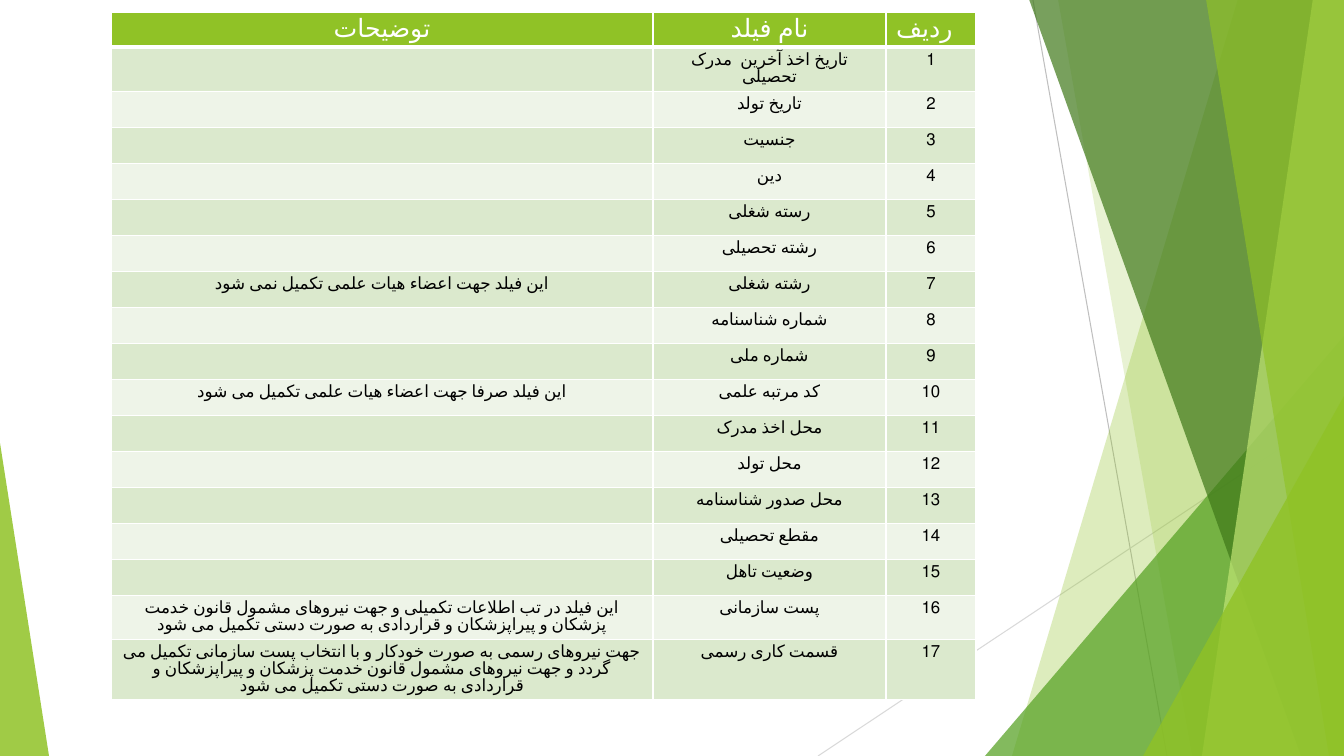
from lxml import etree
from pptx import Presentation
from pptx.dml.color import RGBColor
from pptx.enum.shapes import MSO_CONNECTOR, MSO_SHAPE
from pptx.enum.text import PP_ALIGN
from pptx.oxml.ns import qn
from pptx.util import Pt

STRAIGHT = MSO_CONNECTOR.STRAIGHT
TRIANGLE = MSO_SHAPE.ISOSCELES_TRIANGLE
CENTER = PP_ALIGN.CENTER
LEFT = PP_ALIGN.LEFT

PX = 914400 / 100.8
SLIDE_WIDTH, SLIDE_HEIGHT = 1344, 756
FONT = "Roboto"
COLORS = {
    "lime": "90C226", "green": "54A021", "forest": "3F7819", "pale": "C0E474",
    "gray": "BFBFBF", "silver": "D9D9D9", "white": "FFFFFF", "black": "000000",
    "odd": "DBE9CD", "even": "EEF4E8",
}

COLUMN_WIDTHS = [542, 233, 90]
ROW_HEIGHTS = [35, 44] + [36] * 14 + [44, 60]
HEADERS = ["توضیحات", "نام فیلد", "ردیف"]
FIELDS = [
    "تاریخ اخذ آخرین  مدرک تحصیلی", "تاریخ تولد", "جنسیت", "دین", "رسته شغلی",
    "رشته تحصیلی", "رشته شغلی", "شماره شناسنامه", "شماره ملی", "کد مرتبه علمی",
    "محل اخذ مدرک", "محل تولد", "محل صدور شناسنامه", "مقطع تحصیلی",
    "وضعیت تاهل", "پست سازمانی", "قسمت کاری رسمی",
]
REMARKS = {
    7: "این فیلد جهت اعضاء هیات علمی تکمیل نمی شود",
    10: "این فیلد صرفا جهت اعضاء هیات علمی تکمیل می شود",
    16: "این فیلد در تب اطلاعات تکمیلی و جهت نیروهای مشمول قانون خدمت "
        "پزشکان و پیراپزشکان و قراردادی به صورت دستی تکمیل می شود",
    17: "جهت نیروهای رسمی به صورت خودکار و با انتخاب پست سازمانی تکمیل می گردد "
        "و جهت نیروهای مشمول قانون خدمت پزشکان و پیراپزشکان و قراردادی "
        "به صورت دستی تکمیل می شود",
}


def px(length):
    return round(length * PX)


def rgb(name):
    return RGBColor.from_string(COLORS[name])


def paint(shape, color, opacity):
    shape.shadow.inherit = False
    shape.line.fill.background()
    shape.fill.solid()
    shape.fill.fore_color.rgb = rgb(color)
    color_element = shape.fill._xPr.find(qn("a:solidFill"))[0]
    etree.SubElement(color_element, qn("a:alpha"), val=str(opacity * 1000))


def add_ray(slide, start, end, color):
    ray = slide.shapes.add_connector(STRAIGHT, *map(px, start + end))
    ray.line.color.rgb = rgb(color)
    ray.line.width = Pt(0.75)
    etree.SubElement(ray._element.spPr, qn("a:effectLst"))


def add_shard(slide, box, top_inset, bottom_inset, color, opacity):
    left, top, width, height = box
    right, bottom = left + width, top + height
    builder = slide.shapes.build_freeform(px(left + top_inset), px(top))
    corners = [(right, top), (right, bottom), (left + bottom_inset, bottom)]
    builder.add_line_segments([(px(x), px(y)) for x, y in corners])
    paint(builder.convert_to_shape(), color, opacity)


def add_triangle(slide, box, apex, color, opacity):
    triangle = slide.shapes.add_shape(TRIANGLE, *map(px, box))
    triangle.adjustments[0] = apex
    paint(triangle, color, opacity)


def add_facets(slide, box):
    left, top, width, height = box
    right, bottom = left + width, top + height
    panel = (left + 985, top - 1, width - 985, height + 1)
    add_ray(slide, (left + 1033, top), (left + 1167, bottom), "gray")
    add_ray(slide, (right, top + 406), (left + 818, bottom), "silver")
    add_shard(slide, panel, 253, 27, "lime", 30)
    add_shard(slide, panel, 73, 207, "lime", 20)
    add_triangle(slide, (right - 359, bottom - 420, 359, 420), 1, "green", 72)
    add_shard(slide, panel, 44, 316, "forest", 70)
    add_shard(slide, panel, 328, 217, "pale", 70)
    add_shard(slide, panel, 221, 344, "lime", 65)
    add_triangle(slide, (right - 201, bottom - 360, 201, 360), 1, "lime", 80)
    add_triangle(slide, (left, bottom - 313, 49, 313), 0, "lime", 85)


def set_borders(cell, bottom_width):
    properties = cell._tc.get_or_add_tcPr()
    widths = {"a:lnL": 1, "a:lnR": 1, "a:lnT": 1, "a:lnB": bottom_width}
    for position, (tag, width) in enumerate(widths.items()):
        border = etree.Element(qn(tag), w=str(Pt(width)))
        fill = etree.SubElement(border, qn("a:solidFill"))
        etree.SubElement(fill, qn("a:srgbClr"), val=COLORS["white"])
        properties.insert(position, border)


def fill_cell(cell, text, size, color, background, alignment, spacing):
    cell.fill.solid()
    cell.fill.fore_color.rgb = rgb(background)
    paragraph = cell.text_frame.paragraphs[0]
    paragraph.text = text
    paragraph.alignment = alignment
    if spacing:
        paragraph.line_spacing = Pt(spacing)
    if alignment == CENTER:
        paragraph._p.get_or_add_pPr().set("rtl", "1")
    for run in paragraph.runs:
        run.font.name = FONT
        run.font.size = Pt(size)
        run.font.color.rgb = rgb(color)
        if not text.isdigit():
            run.font._element.set("lang", "fa-IR")
    if not text:
        etree.SubElement(paragraph._p, qn("a:endParaRPr"), sz=str(size * 100))


def add_field_table(slide, box):
    rows = [HEADERS] + [
        [REMARKS.get(number, ""), field, str(number)]
        for number, field in enumerate(FIELDS, 1)
    ]
    frame = slide.shapes.add_table(len(rows), len(HEADERS), *map(px, box))
    table = frame.table
    for column, width in zip(table.columns, COLUMN_WIDTHS):
        column.width = px(width)
    for row, height in zip(table.rows, ROW_HEIGHTS):
        row.height = px(height)
    for row_index, texts in enumerate(rows):
        for column_index, text in enumerate(texts):
            cell = table.cell(row_index, column_index)
            is_number_column = column_index == 2
            if row_index == 0:
                alignment = LEFT if is_number_column else CENTER
                fill_cell(cell, text, 18, "white", "lime", alignment, 18)
            else:
                background = "odd" if row_index % 2 else "even"
                spacing = None if is_number_column else 12
                fill_cell(cell, text, 12, "black", background, CENTER, spacing)
            set_borders(cell, 1 if row_index else 3)


def main():
    presentation = Presentation()
    presentation.slide_width = px(SLIDE_WIDTH)
    presentation.slide_height = px(SLIDE_HEIGHT)
    slide = presentation.slides.add_slide(presentation.slide_layouts[6])
    add_facets(slide, (0, 0, SLIDE_WIDTH, SLIDE_HEIGHT))
    add_field_table(slide, (111, 12, sum(COLUMN_WIDTHS), sum(ROW_HEIGHTS)))
    presentation.save("out.pptx")


if __name__ == "__main__":
    main()
